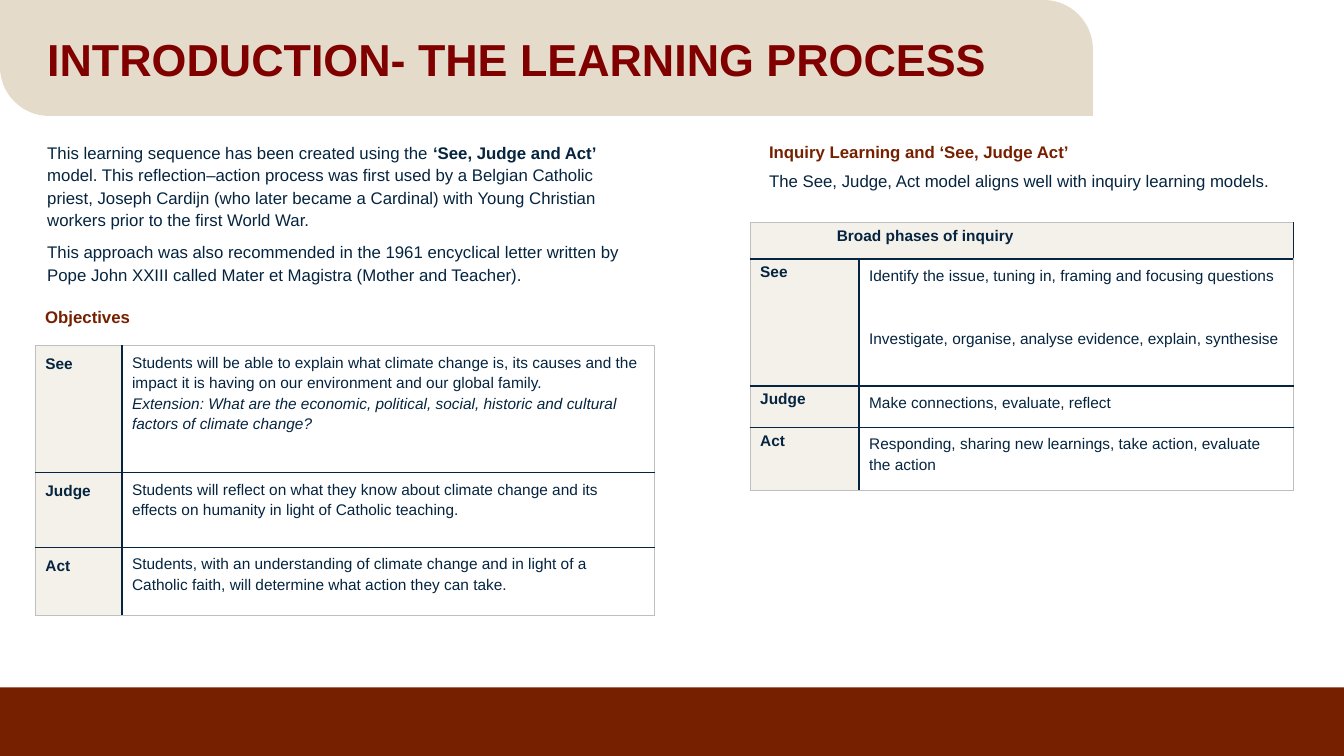
import pptx
import pptx.util
import pptx.dml.color
import pptx.enum.shapes
import pptx.enum.text
import pptx.oxml
import pptx.oxml.ns

Inches, Pt = pptx.util.Inches, pptx.util.Pt

# Content: a paragraph is a list of (text, style) runs; style holds b or i
TITLE = "INTRODUCTION- THE LEARNING PROCESS"
INTRO = [
    [("This learning sequence has been created using the ", ""),
     ("‘See, Judge and Act’ ", "b"),
     ("model. This reflection–action process was first used by a Belgian Catholic "
      "priest, Joseph Cardijn (who later became a Cardinal) with Young Christian "
      "workers prior to the first World War.", "")],
    [("This approach was also recommended in the 1961 encyclical letter written by "
      "Pope John XXIII called Mater et Magistra (Mother and Teacher).", "")],
]
INQUIRY_HEAD = "Inquiry Learning and ‘See, Judge Act’"
INQUIRY_TEXT = "The See, Judge, Act model aligns well with inquiry learning models."
OBJECTIVES = [
    ("See", [("Students will be able to explain what climate change is, its causes and "
              "the impact it is having on our environment and our global family.", ""),
             ("Extension: What are the economic, political, social, historic and "
              "cultural factors of climate change?", "i")]),
    ("Judge", [("Students will reflect on what they know about climate change and its "
                "effects on humanity in light of Catholic teaching.", "")]),
    ("Act", [("Students, with an understanding of climate change and in light of a "
              "Catholic faith, will determine what action they can take.", "")]),
]
PHASES_HEAD = "Broad phases of inquiry"
PHASES = [
    ("See", "Identify the issue, tuning in, framing and focusing questions"),
    ("", "Investigate, organise, analyse evidence, explain, synthesise"),
    ("Judge", "Make connections, evaluate, reflect"),
    ("Act", "Responding, sharing new learnings, take action, evaluate the action"),
]
NAVY, RUST, MAROON, SAND, GREY = "05243F", "762000", "800000", "E5DBCB", "BFBFBF"


def rgb(value):
    return pptx.dml.color.RGBColor.from_string(value)


def write(tf, paragraphs, size, color, spacing=None, before=0):
    tf.word_wrap = True
    for i, runs in enumerate(paragraphs):
        p = tf.paragraphs[0] if i == 0 else tf.add_paragraph()
        if spacing:
            p.line_spacing = spacing
        if i:
            p.space_before = Pt(before)
        for text, style in runs:
            r = p.add_run()
            r.text = text
            r.font.name, r.font.size = "Arial", Pt(size)
            r.font.bold, r.font.italic = "b" in style, "i" in style
            r.font.color.rgb = rgb(color)


def add_text(box, *args, **kwargs):
    tf = s.shapes.add_textbox(*map(Inches, box)).text_frame
    write(tf, *args, **kwargs)
    return tf


def add_panel(kind, box, color):
    sp = s.shapes.add_shape(kind, *map(Inches, box))
    sp.shadow.inherit = False
    sp.fill.solid()
    sp.fill.fore_color.rgb = rgb(color)
    sp.line.fill.background()
    return sp


def set_border(cell, side, color):
    paint = f'<a:solidFill><a:srgbClr val="{color}"/></a:solidFill>' if color else "<a:noFill/>"
    cell._tc.get_or_add_tcPr().append(pptx.oxml.parse_xml(
        f'<a:ln{side} {pptx.oxml.ns.nsdecls("a")} w="12700">{paint}</a:ln{side}>'))


def shade(cell):
    cell.fill.solid()
    cell.fill.fore_color.rgb = rgb(SAND)
    clr = cell._tc.tcPr.find(".//" + pptx.oxml.ns.qn("a:srgbClr") + f"[@val='{SAND}']")
    clr.append(pptx.oxml.parse_xml(
        f'<a:alpha {pptx.oxml.ns.nsdecls("a")} val="40000"/>'))


def add_grid(left, top, widths, heights, open_rule=None):
    """Table with grey edges and navy inner rules; open_rule is a rule left undrawn."""
    rows, cols = len(heights), len(widths)
    table = s.shapes.add_table(rows, cols, Inches(left), Inches(top),
                               Inches(sum(widths)), Inches(sum(heights))).table
    table.first_row = table.horz_banding = False
    for col, width in zip(table.columns, widths):
        col.width = Inches(width)
    for row, height in zip(table.rows, heights):
        row.height = Inches(height)
    for y in range(rows):
        for x in range(cols):
            cell = table.cell(y, x)
            for side, pos, last in (("L", x, cols), ("R", x + 1, cols),
                                    ("T", y, rows), ("B", y + 1, rows)):
                color = GREY if pos in (0, last) else NAVY
                if side in "TB" and pos == open_rule:
                    color = None
                set_border(cell, side, color)
            if x == 0:
                shade(cell)
            else:
                cell.fill.background()
    return table


prs = pptx.Presentation()
prs.slide_width, prs.slide_height = Inches(13.33), Inches(7.5)
s = prs.slides.add_slide(prs.slide_layouts[6])

# Footer band and title banner
shapes = pptx.enum.shapes.MSO_SHAPE
add_panel(shapes.RECTANGLE, (0, 6.82, 13.33, 0.68), RUST)
banner = add_panel(shapes.ROUND_2_DIAG_RECTANGLE, (0, 0, 10.84, 1.15), SAND)
banner.adjustments[0], banner.adjustments[1] = 0, 0.425
tf = add_text((0.37, 0.18, 10.23, 0.87), [[(TITLE, "b")]], 32, MAROON, 0.9)
tf.vertical_anchor = pptx.enum.text.MSO_ANCHOR.MIDDLE

# Introduction and headings
add_text((0.37, 1.35, 6.12, 1.6), INTRO, 12, NAVY, 1.1, before=7.5)
add_text((0.35, 2.99, 5.43, 0.3), [[("Objectives", "b")]], 12, RUST)
tf = add_text((7.53, 1.36, 5.43, 0.6),
              [[(INQUIRY_HEAD, "b")], [(INQUIRY_TEXT, "")]], 12, RUST, before=6)
tf.paragraphs[1].runs[0].font.color.rgb = rgb(NAVY)

# Objectives table
table = add_grid(0.35, 3.43, (0.86, 5.28), (1.26, 0.74, 0.68))
for y, (step, goals) in enumerate(OBJECTIVES):
    write(table.cell(y, 0).text_frame, [[(step, "b")]], 11, NAVY, Pt(16))
    write(table.cell(y, 1).text_frame, [[goal] for goal in goals], 11, NAVY, 1.2)

# Inquiry phases table
table = add_grid(7.44, 2.21, (1.08, 4.31), (0.36, 0.63, 0.63, 0.41, 0.63), open_rule=2)
head = table.cell(0, 0)
head.merge(table.cell(0, 1))
table.cell(1, 0).merge(table.cell(2, 0))
write(head.text_frame, [[(PHASES_HEAD, "b")]], 11, NAVY)
head.margin_left = Inches(0.86)
for y, (step, phase) in enumerate(PHASES, 1):
    if step:
        write(table.cell(y, 0).text_frame, [[(step, "b")]], 11, NAVY)
    write(table.cell(y, 1).text_frame, [[(phase, "")]], 11, NAVY, 1.2)

prs.save("out.pptx")
